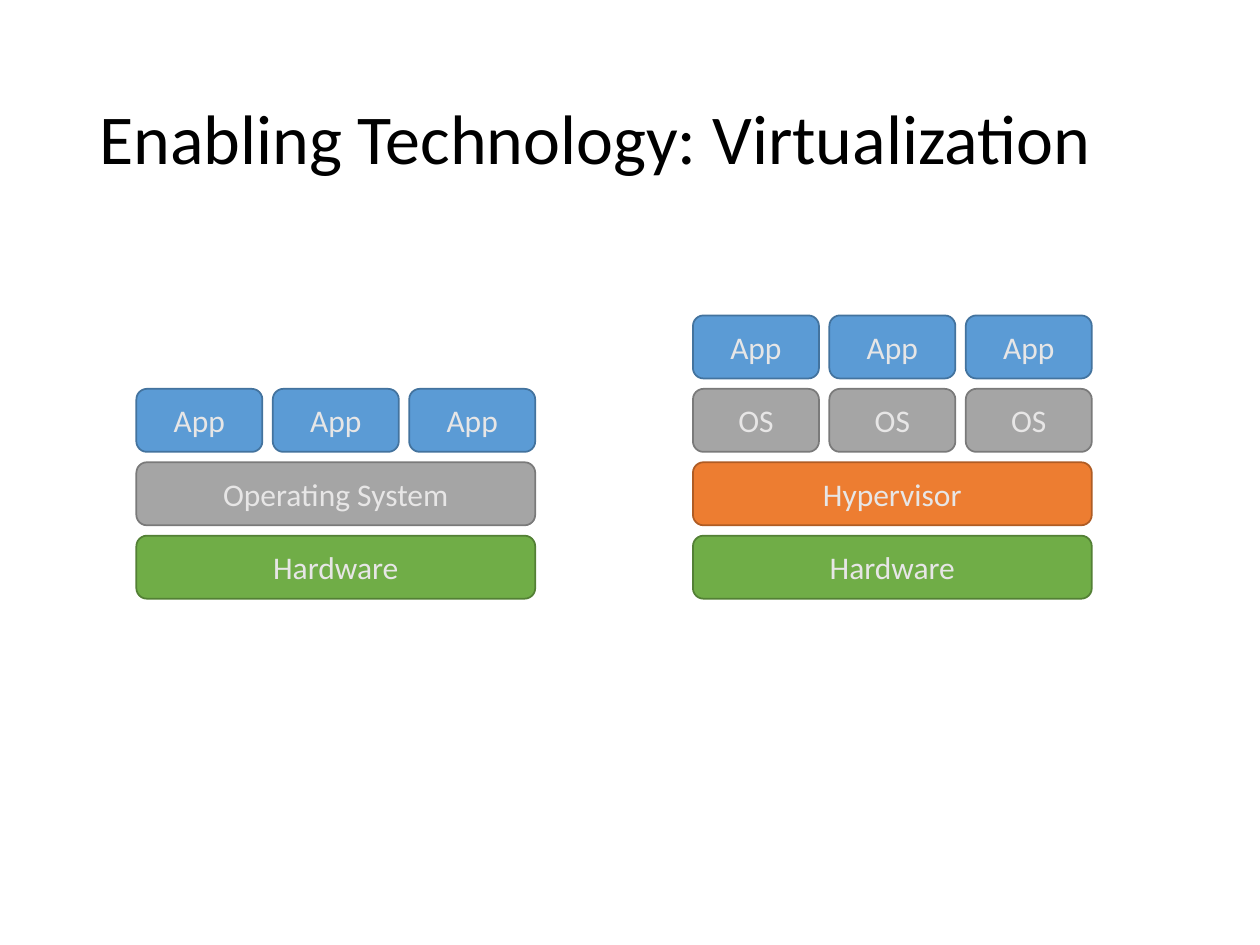
from pptx import Presentation
from pptx.dml.color import RGBColor
from pptx.enum.shapes import MSO_SHAPE
from pptx.enum.text import MSO_ANCHOR, MSO_AUTO_SIZE, PP_ALIGN
from pptx.util import Cm, Pt

TITLE = "Enabling Technology: Virtualization"
# Each stack: left edge in cm, then layers from bottom to top as (kind, labels)
STACKS = [
    (2.75, [("hardware", ["Hardware"]),
            ("os", ["Operating System"]),
            ("app", ["App"] * 3)]),
    (13.97, [("hardware", ["Hardware"]),
             ("hypervisor", ["Hypervisor"]),
             ("os", ["OS"] * 3),
             ("app", ["App"] * 3)]),
]
FILLS = {"hardware": "70AD47", "os": "A5A5A5",
         "app": "5B9BD5", "hypervisor": "ED7D31"}
LINES = {"hardware": "538035", "os": "7A7A7A",
         "app": "43739E", "hypervisor": "AF5C24"}
TEXT = {"title": "000000", "box": "E7E6E6"}

STACK_W, BOX_H, GAP = 8.04, 1.27, 0.21
BOTTOM_ROW = 10.8


def set_text(sp, text, size, color, align):
    tf = sp.text_frame
    tf.word_wrap = True
    tf.auto_size = MSO_AUTO_SIZE.NONE
    tf.vertical_anchor = MSO_ANCHOR.MIDDLE
    p = tf.paragraphs[0]
    p.alignment = align
    r = p.add_run()
    r.text = text
    r.font.name = "Calibri"
    r.font.size = Pt(size)
    r.font.color.rgb = RGBColor.from_string(color)
    return p


def add_box(shapes, kind, label, x, y, w):
    sp = shapes.add_shape(MSO_SHAPE.ROUNDED_RECTANGLE,
                          Cm(x), Cm(y), Cm(w), Cm(BOX_H))
    sp.shadow.inherit = False
    sp.fill.solid()
    sp.fill.fore_color.rgb = RGBColor.from_string(FILLS[kind])
    sp.line.color.rgb = RGBColor.from_string(LINES[kind])
    sp.line.width = Pt(1)
    set_text(sp, label, 18, TEXT["box"], PP_ALIGN.CENTER)


def add_stack(slide, left, layers):
    group = slide.shapes.add_group_shape()
    for row, (kind, labels) in enumerate(layers):
        y = BOTTOM_ROW - row * (BOX_H + GAP)
        w = (STACK_W - GAP * (len(labels) - 1)) / len(labels)
        for col, label in enumerate(labels):
            add_box(group.shapes, kind, label, left + col * (w + GAP), y, w)


def main():
    prs = Presentation()
    prs.slide_width, prs.slide_height = Cm(25.4), Cm(19.05)
    slide = prs.slides.add_slide(prs.slide_layouts[5])

    title = slide.shapes.title
    title.left, title.top = Cm(1.75), Cm(1.02)
    title.width, title.height = Cm(21.9), Cm(3.68)
    p = set_text(title, TITLE, 40, TEXT["title"], PP_ALIGN.LEFT)
    p.line_spacing = 0.9

    for left, layers in STACKS:
        add_stack(slide, left, layers)
    prs.save("out.pptx")


if __name__ == "__main__":
    main()
